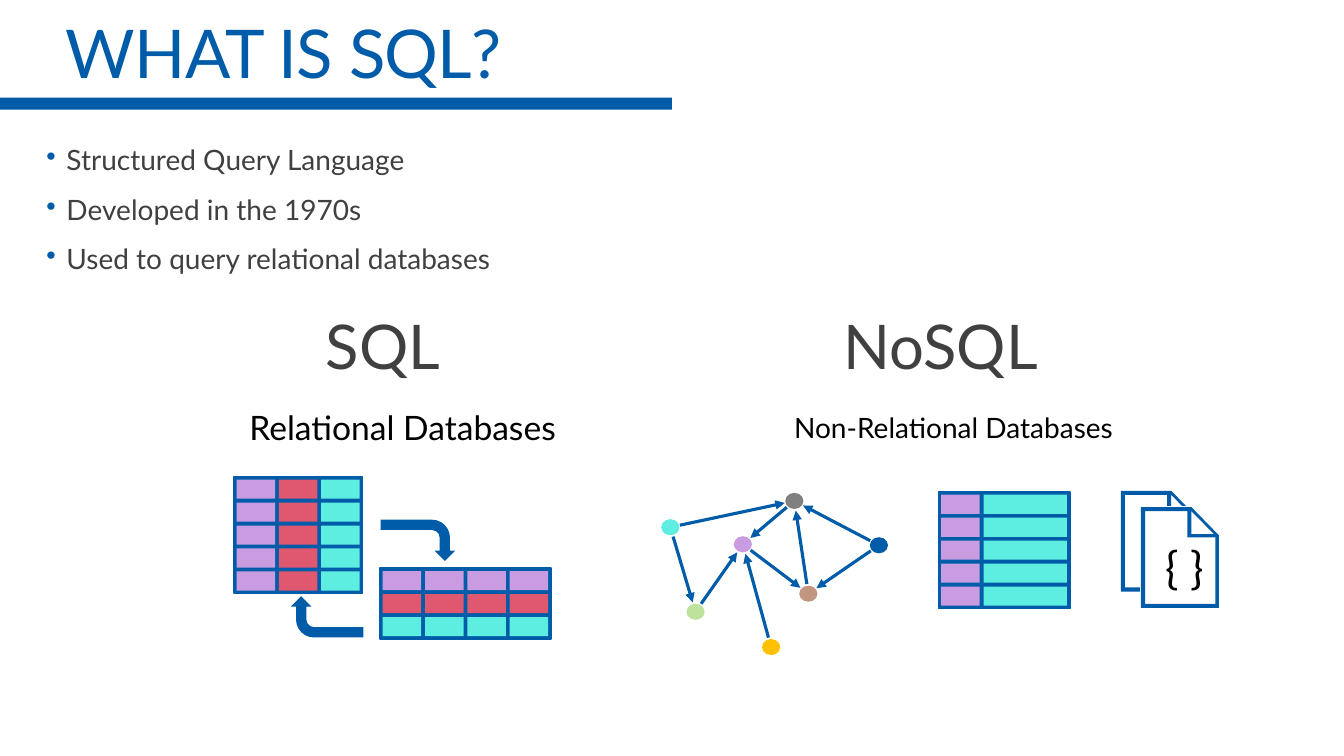
import math
from dataclasses import dataclass

import pptx
import pptx.dml.color
import pptx.enum.shapes
import pptx.enum.text
import pptx.oxml.ns
import pptx.util
from lxml import etree

Pt = pptx.util.Pt
qn = pptx.oxml.ns.qn
SHAPE = pptx.enum.shapes.MSO_SHAPE
ALIGN = pptx.enum.text.PP_ALIGN
ANCHOR = pptx.enum.text.MSO_ANCHOR


def rgb(color):
    return pptx.dml.color.RGBColor.from_string(color)


@dataclass(frozen=True)
class Theme:
    font: str = "Lato"
    blue: str = "005CA8"
    dark: str = "404040"
    black: str = "000000"
    white: str = "FFFFFF"
    lilac: str = "C99CE2"
    red: str = "E05770"
    aqua: str = "5EEDE1"
    green: str = "BEE19B"
    tan: str = "C29580"
    grey: str = "808080"
    gold: str = "FFC000"
    title: int = 48
    head: int = 44
    brace: int = 32
    label: int = 24
    body: int = 20


class Deck:
    def __init__(self, theme):
        self.theme = theme
        self.file = pptx.Presentation()
        self.file.slide_width = Pt(960)
        self.file.slide_height = Pt(540)
        self.slide = self.file.slides.add_slide(self.file.slide_layouts[6])

    def paint(self, shape, fill, line=None):
        shape.shadow.inherit = False
        shape.fill.solid()
        shape.fill.fore_color.rgb = rgb(fill)
        if line:
            shape.line.color.rgb = rgb(line)
            shape.line.width = Pt(1.25)
        else:
            shape.line.fill.background()

    def shape(self, kind, x, y, w, h, fill, line=None, turn=0):
        item = self.slide.shapes.add_shape(kind, Pt(x), Pt(y), Pt(w), Pt(h))
        self.paint(item, fill, line)
        item.rotation = turn

    def text(self, x, y, w, h, words, size, color, align=ALIGN.LEFT,
             tight=False, bullet=False, anchor=ANCHOR.TOP, track=0):
        """Write one paragraph per line; tight sets the spacing of heads and lists."""
        frame = self.slide.shapes.add_textbox(Pt(x), Pt(y), Pt(w), Pt(h)).text_frame
        frame.word_wrap = True
        frame.vertical_anchor = anchor
        frame.text = words
        for index, para in enumerate(frame.paragraphs):
            para.alignment = align
            if tight:
                para.line_spacing = 0.9
                para.space_before = Pt(12 if index else 0)
                para.space_after = Pt(2)
            if bullet:
                self.bullet(para)
            for run in para.runs:
                run.font.name = self.theme.font
                run.font.size = Pt(size)
                run.font.color.rgb = rgb(color)
                if track:
                    run.font._element.set("spc", str(track))

    def bullet(self, para):
        props = para._p.get_or_add_pPr()
        props.set("marL", str(Pt(14.4)))
        props.set("indent", str(-Pt(14.4)))
        tint = etree.SubElement(props, qn("a:buClr"))
        etree.SubElement(tint, qn("a:srgbClr"), val=self.theme.blue)
        etree.SubElement(props, qn("a:buChar"), char="•")

    def arrow(self, start, end):
        """Join two dot centres, stopping short of both dots."""
        gap = 7
        angle = math.atan2(end[1] - start[1], end[0] - start[0])
        dx, dy = gap * math.cos(angle), gap * math.sin(angle)
        line = self.slide.shapes.add_connector(
            pptx.enum.shapes.MSO_CONNECTOR.STRAIGHT,
            Pt(start[0] + dx), Pt(start[1] + dy), Pt(end[0] - dx), Pt(end[1] - dy))
        line.line.color.rgb = rgb(self.theme.blue)
        line.line.width = Pt(2.25)
        etree.SubElement(line.line._get_or_add_ln(), qn("a:tailEnd"), type="triangle")
        etree.SubElement(line._element.spPr, qn("a:effectLst"))

    def grid(self, x, y, widths, colors):
        """Draw a small table; colors holds one list of cell colours per row."""
        edge, gap, high = 2, 2.75, 13.65
        self.shape(SHAPE.RECTANGLE, x, y,
                   2 * edge + sum(widths) + gap * (len(widths) - 1),
                   2 * edge + high * len(colors) + gap * (len(colors) - 1),
                   self.theme.blue, self.theme.blue)
        for row, tints in enumerate(colors):
            left = x + edge
            for width, tint in zip(widths, tints):
                self.shape(SHAPE.RECTANGLE, left, y + edge + row * (high + gap),
                           width, high, tint)
                left += width + gap

    def outline(self, x, y, loops, fill, line=None):
        """Draw closed loops as one shape; inner loops become holes."""
        pen = None
        for loop in loops:
            spots = [(Pt(x + px), Pt(y + py)) for px, py in loop]
            if pen is None:
                pen = self.slide.shapes.build_freeform(*spots[0])
            else:
                pen.move_to(*spots[0])
            pen.add_line_segments(spots[1:], close=True)
        self.paint(pen.convert_to_shape(), fill, line)

    def page(self, x, y):
        """Draw a sheet with a folded corner."""
        rim = [(36, 0), (0, 0), (0, 72), (55.7, 72), (55.7, 20.2)]
        sheet = [(2.9, 69.1), (2.9, 2.9), (33.1, 2.9), (33.1, 21.6),
                 (53.2, 21.6), (53.2, 69.1)]
        fold = [(36, 2.9), (52.2, 19.4), (36, 19.4)]
        self.outline(x, y, [rim], self.theme.white, self.theme.white)
        self.outline(x, y, [rim, sheet, fold], self.theme.blue)


def main():
    t = Theme()
    deck = Deck(t)
    deck.shape(SHAPE.RECTANGLE, 0, 69.8, 480, 8.6, t.blue)
    deck.text(40, 0, 785.5, 69.8, "WHAT IS SQL?", t.title, t.blue,
              tight=True, anchor=ANCHOR.BOTTOM, track=-50)
    deck.text(26, 100.8, 907, 410,
              "Structured Query Language\nDeveloped in the 1970s\n"
              "Used to query relational databases",
              t.body, t.dark, tight=True, bullet=True)
    deck.text(218.9, 222.5, 109.4, 54, "SQL", t.head, t.dark, ALIGN.CENTER, tight=True)
    deck.text(595.4, 222.5, 180.7, 54, "NoSQL", t.head, t.dark, tight=True)
    deck.text(159.8, 287.3, 255.6, 36, "Relational Databases",
              t.label, t.black, ALIGN.CENTER)
    deck.text(549.4, 289.4, 263.5, 31.7, "Non-Relational Databases",
              t.body, t.black, ALIGN.CENTER)

    cell, wide = 27.5, 59.6
    trio = [t.lilac, t.red, t.aqua]
    deck.grid(167, 340.6, [cell] * 3, [trio] * 5)
    deck.grid(271.4, 406, [cell] * 4, [[tint] * 4 for tint in trio])
    deck.grid(670.3, 351.4, [cell, wide], [[t.lilac, t.aqua]] * 5)
    deck.shape(SHAPE.BENT_ARROW, 283.7, 359.3, 29.5, 53.3, t.blue, turn=90)
    deck.shape(SHAPE.BENT_ARROW, 218.9, 414.7, 29.5, 51.8, t.blue, turn=270)

    dots = {t.lilac: (530.6, 388.8), t.green: (496.8, 437), t.tan: (577.4, 424.1),
            t.aqua: (478.8, 376.6), t.grey: (567.4, 357.8), t.blue: (627.8, 389.5),
            t.gold: (550.8, 462.2)}
    for tint, (x, y) in dots.items():
        deck.shape(SHAPE.OVAL, x - 6.5, y - 5.75, 13, 11.5, tint)
    links = [(t.aqua, t.grey), (t.green, t.lilac), (t.lilac, t.tan),
             (t.blue, t.tan), (t.tan, t.grey), (t.blue, t.grey),
             (t.aqua, t.green), (t.gold, t.lilac), (t.grey, t.lilac)]
    for start, end in links:
        deck.arrow(dots[start], dots[end])

    for x, y in [(800.6, 350.6), (815, 362.2)]:
        deck.page(x, y)
    deck.text(825.1, 381.6, 49.7, 46, "{ }", t.brace, t.black)
    deck.file.save("out.pptx")


if __name__ == "__main__":
    main()
